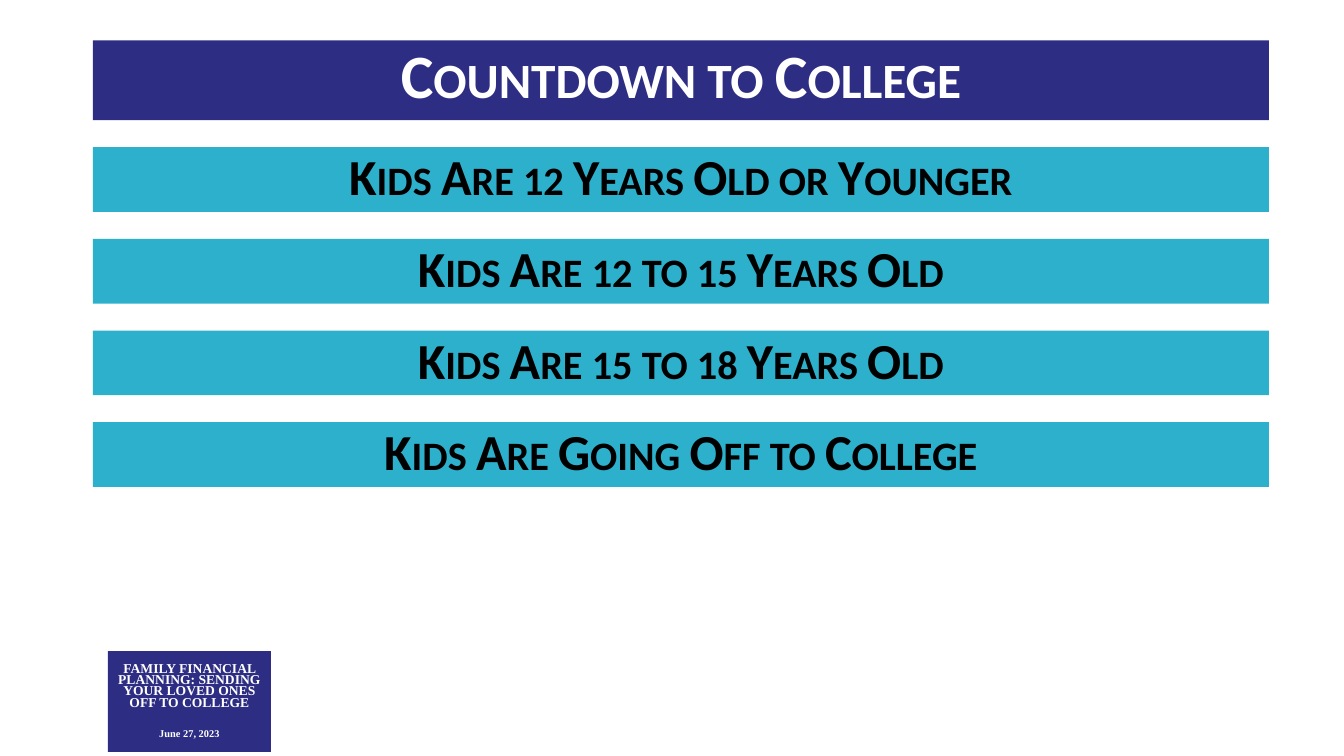
from pptx import Presentation
from pptx.dml.color import RGBColor as RGB
from pptx.enum.shapes import MSO_SHAPE as Kind
from pptx.enum.text import MSO_ANCHOR as Anchor, MSO_AUTO_SIZE as Fit, PP_ALIGN as Align
from pptx.util import Cm, Pt

theme = {
    "navy": RGB.from_string("2D2D83"),
    "teal": RGB.from_string("2DB0CC"),
    "white": RGB.from_string("FFFFFF"),
    "black": RGB.from_string("000000"),
    "sans": "Calibri",
    "serif": "Times New Roman",
    "title": Pt(44),
    "bar": Pt(36),
    "badge": Pt(9.7),
    "date": Pt(7.4),
}


def style(shape, box, fill, anchor):
    places = dict(zip(("left", "top", "width", "height"), map(Cm, box)))
    for name, value in places.items():
        setattr(shape, name, value)
    shape.fill.solid()
    shape.fill.fore_color.rgb = theme[fill]
    frame = shape.text_frame
    form = {
        "word_wrap": True,
        "auto_size": Fit.NONE,
        "vertical_anchor": anchor,
        "margin_left": Cm(0.25),
        "margin_right": Cm(0.25),
        "margin_top": Cm(0.13),
        "margin_bottom": Cm(0.13),
    }
    for name, value in form.items():
        setattr(frame, name, value)
    return frame


def write(para, text, size, face, color, pitch, gap=0, caps=False):
    props = para._p.get_or_add_pPr()
    props.set("marL", "0")
    props.set("indent", "0")
    props.insert_element_before(props.makeelement(
        props.tag.replace("pPr", "buNone"), {}), "a:tabLst", "a:defRPr", "a:extLst")
    form = {"alignment": Align.CENTER, "line_spacing": pitch,
            "space_before": Pt(gap), "space_after": Pt(0)}
    for name, value in form.items():
        setattr(para, name, value)
    run = para.add_run()
    run.text = text
    look = {"size": theme[size], "name": theme[face], "bold": True}
    for name, value in look.items():
        setattr(run.font, name, value)
    run.font.color.rgb = theme[color]
    if caps:
        run._r.get_or_add_rPr().set("cap", "small")


deck = Presentation()
deck.slide_width, deck.slide_height = Cm(33.87), Cm(19.05)
slide = deck.slides.add_slide(deck.slide_layouts[4])

left, width = 2.34, 29.64
frame = style(slide.shapes.title, (left, 1.02, width, 2.01), "navy", Anchor.TOP)
write(frame.paragraphs[0], "Countdown to College", "title", "sans", "white", 0.9, caps=True)

stages = [
    "Kids Are 12 Years Old or Younger",
    "Kids Are 12 to 15 Years Old",
    "Kids Are 15 to 18 Years Old",
    "Kids Are Going Off to College",
]
top, step = 3.71, 2.31
for row, stage in enumerate(stages):
    bar = slide.placeholders[row + 1]
    frame = style(bar, (left, top + row * step, width, 1.63), "teal", Anchor.TOP)
    write(frame.paragraphs[0], stage, "bar", "sans", "black", 0.9, caps=True)

badge = slide.shapes.add_shape(Kind.RECTANGLE, 0, 0, 0, 0)
badge.shadow.inherit = False
badge.line.fill.background()
frame = style(badge, (2.72, 16.41, 4.11, 2.54), "navy", Anchor.MIDDLE)
event = "FAMILY FINANCIAL PLANNING: SENDING YOUR LOVED ONES OFF TO COLLEGE"
write(frame.paragraphs[0], event, "badge", "serif", "white", 0.7)
write(frame.add_paragraph(), "June 27, 2023", "date", "serif", "white", 0.7, gap=15)

deck.save("out.pptx")
